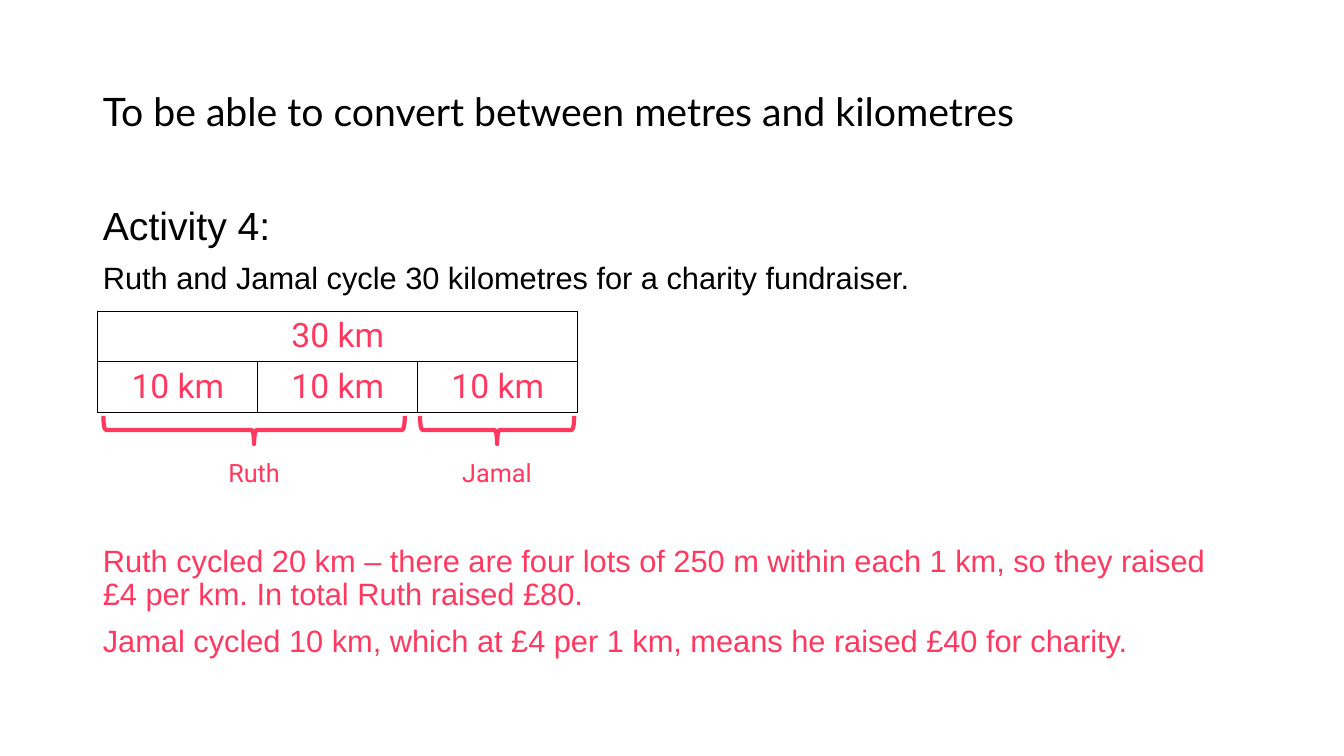
from pptx import Presentation
from pptx import util as u
from pptx.dml.color import RGBColor
from pptx.enum import shapes, text
from pptx.oxml import parse_xml
from pptx.oxml.ns import nsdecls

COLORS = {"ink": "000000", "answer": "FF3860", "paper": "FFFFFF"}


class LessonPage:
    """Holds the lesson style and the current slide."""

    def __init__(self, deck):
        self.page = deck.slides.add_slide(deck.slide_layouts[1])

    def color(self, name):
        return RGBColor.from_string(COLORS[name])

    def place(self, box, left, top, width, height):
        box.left, box.top = u.Inches(left), u.Inches(top)
        box.width, box.height = u.Inches(width), u.Inches(height)

    def add_words(self, para, words, size, font, color, align=text.PP_ALIGN.LEFT):
        para.alignment = align
        span = para.add_run()
        span.text = words
        span.font.size = u.Pt(size)
        span.font.name = font
        span.font.color.rgb = self.color(color)

    def title(self, words):
        box = self.page.shapes.title
        self.place(box, 0.92, 0.4, 9.6, 1.45)
        frame = box.text_frame
        frame.auto_size = text.MSO_AUTO_SIZE.NONE
        frame.vertical_anchor = text.MSO_ANCHOR.MIDDLE
        frame.paragraphs[0].line_spacing = 0.9
        self.add_words(frame.paragraphs[0], words, 28, "Lato", "ink")

    def body(self, lines):
        box = self.page.placeholders[1]
        self.place(box, 0.92, 2, 11.5, 4.76)
        frame = box.text_frame
        frame.auto_size = text.MSO_AUTO_SIZE.NONE
        for index, (words, size, color, before) in enumerate(lines):
            para = frame.add_paragraph() if index else frame.paragraphs[0]
            properties = para._p.get_or_add_pPr()
            properties.set("marL", "0")
            properties.set("indent", "0")
            properties.append(parse_xml(f"<a:buNone {nsdecls('a')}/>"))
            para.line_spacing = 0.9
            para.space_before = u.Pt(before)
            self.add_words(para, words, size, "Arial", color)

    def bar_model(self, whole, parts):
        frame = self.page.shapes.add_table(
            2, len(parts), u.Inches(0.97), u.Inches(3.09), u.Inches(4.76), u.Inches(1))
        table = frame.table
        table.first_row = table.horz_banding = False
        for cell in table.iter_cells():
            self.border(cell)
            cell.fill.solid()
            cell.fill.fore_color.rgb = self.color("paper")
        table.cell(0, 0).merge(table.cell(0, len(parts) - 1))
        labels = [(0, 0, whole)] + [(1, column, part) for column, part in enumerate(parts)]
        for row, column, words in labels:
            para = table.cell(row, column).text_frame.paragraphs[0]
            self.add_words(para, words, 24, "Roboto", "answer", text.PP_ALIGN.CENTER)

    def border(self, cell):
        properties = cell._tc.get_or_add_tcPr()
        for side in ("lnL", "lnR", "lnT", "lnB"):
            properties.append(parse_xml(
                f'<a:{side} {nsdecls("a")} w="{u.Pt(1)}"><a:solidFill>'
                f'<a:srgbClr val="{COLORS["ink"]}"/></a:solidFill></a:{side}>'))

    def brace(self, left, top, width, height):
        box = self.page.shapes.add_shape(
            shapes.MSO_SHAPE.RIGHT_BRACE,
            u.Inches(left), u.Inches(top), u.Inches(width), u.Inches(height))
        box.rotation = 90
        box.shadow.inherit = False
        box.fill.background()
        box.line.color.rgb = self.color("answer")
        box.line.width = u.Pt(3)

    def label(self, words, left, width):
        box = self.page.shapes.add_textbox(
            u.Inches(left), u.Inches(4.49), u.Inches(width), u.Inches(0.4))
        frame = box.text_frame
        frame.word_wrap = False
        frame.auto_size = text.MSO_AUTO_SIZE.SHAPE_TO_FIT_TEXT
        self.add_words(frame.paragraphs[0], words, 18, "Roboto", "answer", text.PP_ALIGN.CENTER)


def main():
    deck = Presentation()
    deck.slide_width, deck.slide_height = u.Inches(13.33), u.Inches(7.5)
    lesson = LessonPage(deck)
    lesson.title("To be able to convert between metres and kilometres")
    lesson.body([
        ("Activity 4:", 28, "ink", 0),
        ("Ruth and Jamal cycle 30 kilometres for a charity fundraiser.", 22, "ink", 10),
        ("Ruth cycled 20 km – there are four lots of 250 m within each 1 km, "
         "so they raised £4 per km. In total Ruth raised £80.", 22, "answer", 178),
        ("Jamal cycled 10 km, which at £4 per 1 km, means he raised £40 for charity.",
         22, "answer", 10),
    ])
    lesson.bar_model("30 km", ["10 km"] * 3)
    lesson.brace(4.79, 3.5, 0.28, 1.53)
    lesson.brace(2.38, 2.77, 0.28, 2.99)
    lesson.label("Ruth", 2.11, 0.82)
    lesson.label("Jamal", 4.45, 0.96)
    deck.save("out.pptx")


if __name__ == "__main__":
    main()
